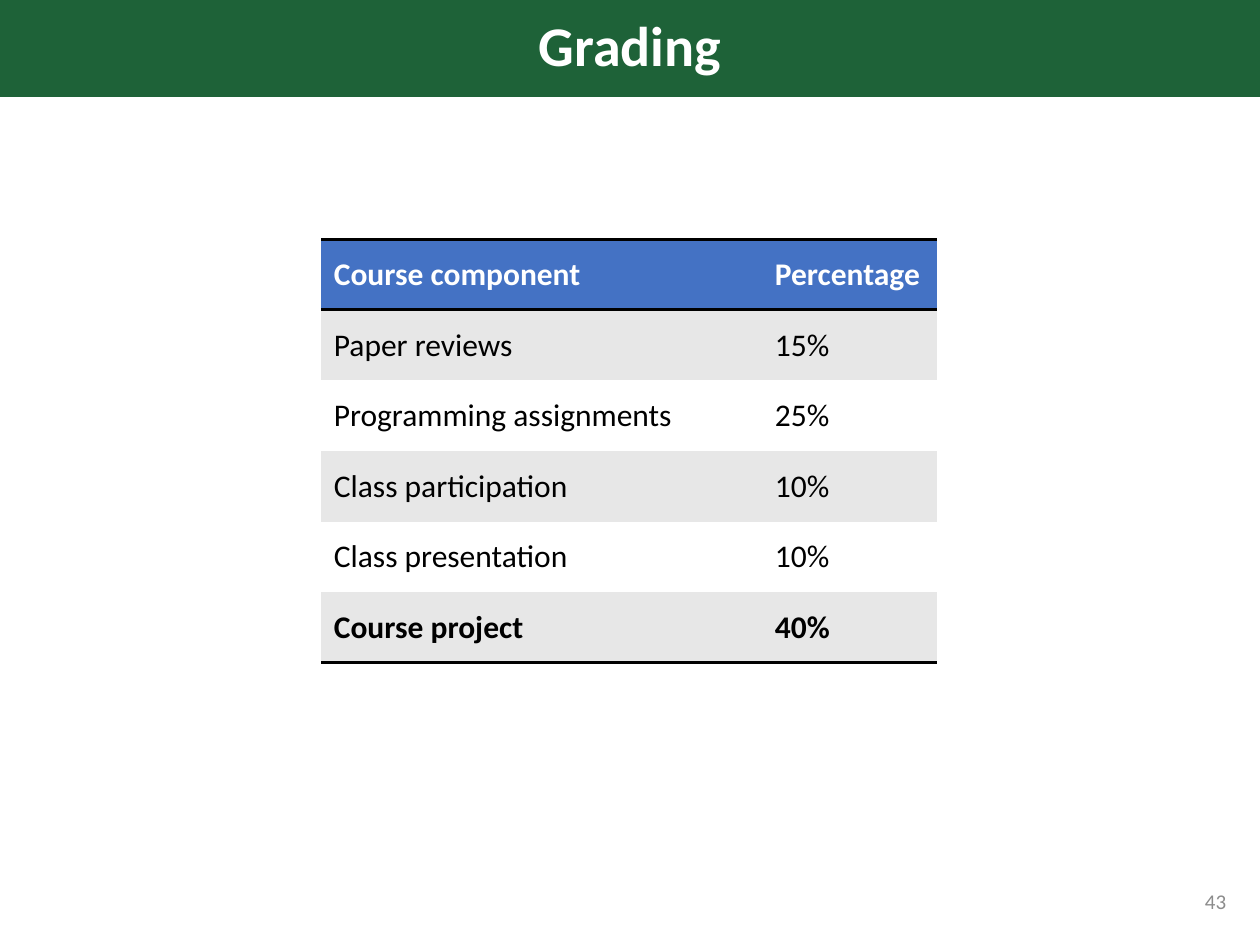
from lxml.etree import SubElement
from pptx import Presentation
from pptx.dml.color import RGBColor
from pptx.enum.shapes import MSO_SHAPE
from pptx.enum.text import MSO_ANCHOR, PP_ALIGN
from pptx.oxml.ns import qn
from pptx.util import Inches, Pt

COLORS = {
    "banner": "1E6238",
    "header": "4472C4",
    "band": "E7E7E7",
    "white": "FFFFFF",
    "black": "000000",
    "number": "8C8C8C",
}
GRADES = [
    ("Course component", "Percentage"),
    ("Paper reviews", "15%"),
    ("Programming assignments", "25%"),
    ("Class participation", "10%"),
    ("Class presentation", "10%"),
    ("Course project", "40%"),
]
COLUMN_WIDTHS = (3.5, 1.39)
ROW_HEIGHT = 0.56
RULE_WIDTH = 2


def color(name):
    return RGBColor.from_string(COLORS[name])


def set_fill(target, name):
    target.fill.solid()
    target.fill.fore_color.rgb = color(name)


def write(frame, text, color_name, align=PP_ALIGN.LEFT, line_spacing=None, **font):
    para = frame.paragraphs[0]
    para.alignment = align
    para.line_spacing = line_spacing
    span = para.add_run()
    span.text = text
    span.font.color.rgb = color(color_name)
    for key, value in {"name": "Calibri", **font}.items():
        setattr(span.font, key, value)


def set_borders(cell, ruled_sides):
    """Rule the given sides (of L, R, T, B) in black and clear the others."""
    properties = cell._tc.get_or_add_tcPr()
    for side in "LRTB":
        line = SubElement(properties, qn(f"a:ln{side}"), w=str(Pt(RULE_WIDTH)))
        if side in ruled_sides:
            fill = SubElement(line, qn("a:solidFill"))
            SubElement(fill, qn("a:srgbClr"), val=COLORS["black"])
        else:
            SubElement(line, qn("a:noFill"))


def add_banner(page, title):
    banner = page.shapes.add_shape(
        MSO_SHAPE.RECTANGLE, 0, 0, Inches(10), Inches(0.77))
    banner.shadow.inherit = False
    set_fill(banner, "banner")
    banner.line.fill.background()
    banner.text_frame.vertical_anchor = MSO_ANCHOR.MIDDLE
    write(banner.text_frame, title, "white", PP_ALIGN.CENTER, 0.9,
          size=Pt(32), bold=True)


def add_grade_table(page):
    last = len(GRADES) - 1
    table = page.shapes.add_table(
        len(GRADES), len(COLUMN_WIDTHS), Inches(2.55), Inches(1.9),
        Inches(sum(COLUMN_WIDTHS)), Inches(ROW_HEIGHT * len(GRADES))).table
    for column, width in zip(table.columns, COLUMN_WIDTHS):
        column.width = Inches(width)
    for index, (row, texts) in enumerate(zip(table.rows, GRADES)):
        row.height = Inches(ROW_HEIGHT)
        is_header = index == 0
        fill = "header" if is_header else "band" if index % 2 else "white"
        # Neighbouring cells share an edge, so both must rule it.
        ruled_sides = {0: "TB", 1: "T", last: "B"}.get(index, "")
        for cell, text in zip(row.cells, texts):
            set_borders(cell, ruled_sides)
            set_fill(cell, fill)
            cell.vertical_anchor = MSO_ANCHOR.MIDDLE
            write(cell.text_frame, text, "white" if is_header else "black",
                  size=Pt(18), bold=index in (0, last))


def add_page_number(page, number):
    box = page.shapes.add_textbox(
        Inches(7.58), Inches(6.95), Inches(2.25), Inches(0.4))
    box.text_frame.word_wrap = True
    box.text_frame.vertical_anchor = MSO_ANCHOR.MIDDLE
    write(box.text_frame, number, "number", PP_ALIGN.RIGHT, size=Pt(12))


def main():
    deck = Presentation()
    deck.slide_width, deck.slide_height = Inches(10), Inches(7.5)
    page = deck.slides.add_slide(deck.slide_layouts[6])
    add_banner(page, "Grading")
    add_grade_table(page)
    add_page_number(page, "43")
    deck.save("out.pptx")


if __name__ == "__main__":
    main()
